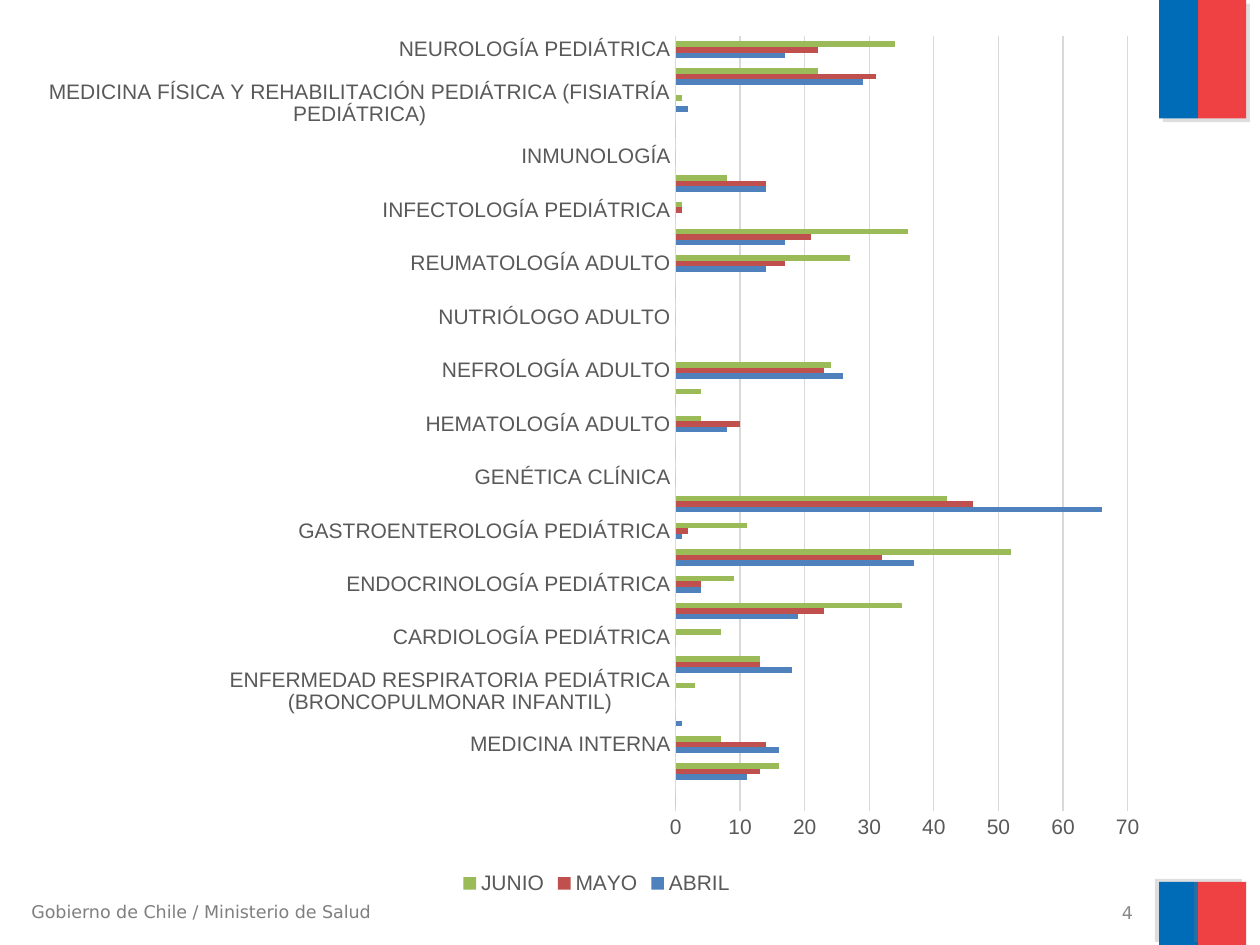
from lxml import etree
from pptx import Presentation
from pptx import util as u
from pptx.chart.data import CategoryChartData
from pptx.dml.color import RGBColor
from pptx.enum import chart as ch, shapes, text
from pptx.oxml import parse_xml
from pptx.oxml.ns import nsdecls, qn

COLORS = {
    "blue": "006CB7", "red": "EF4144", "shadow": "808080",
    "footer": "7F7F7F", "number": "898989", "label": "595959",
    "grid": "D9D9D9", "ABRIL": "4F81BD", "MAYO": "C0504D", "JUNIO": "9BBB59",
}

# Specialty: (ABRIL, MAYO, JUNIO), listed from the bottom up
MONTHS = ("ABRIL", "MAYO", "JUNIO")
DATA = {
    " ": (0, 0, 0),
    "PEDIATRÍA": (11, 13, 16),
    "MEDICINA INTERNA": (16, 14, 7),
    "NEONATOLOGÍA": (1, 0, 0),
    "ENFERMEDAD RESPIRATORIA PEDIÁTRICA (BRONCOPULMONAR INFANTIL)": (0, 0, 3),
    "ENFERMEDAD RESPIRATORIA DE ADULTO (BRONCOPULMONAR)": (18, 13, 13),
    "CARDIOLOGÍA PEDIÁTRICA": (0, 0, 7),
    "CARDIOLOGÍA ADULTO": (19, 23, 35),
    "ENDOCRINOLOGÍA PEDIÁTRICA": (4, 4, 9),
    "ENDOCRINOLOGÍA ADULTO": (37, 32, 52),
    "GASTROENTEROLOGÍA PEDIÁTRICA": (1, 2, 11),
    "GASTROENTEROLOGÍA ADULTO": (66, 46, 42),
    "GENÉTICA CLÍNICA": (0, 0, 0),
    "HEMATO-ONCOLOGÍA INFANTIL": (0, 0, 0),
    "HEMATOLOGÍA ADULTO": (8, 10, 4),
    "NEFROLOGÍA PEDIÁTRICA": (0, 0, 4),
    "NEFROLOGÍA ADULTO": (26, 23, 24),
    "NUTRIÓLOGO PEDIÁTRICO": (0, 0, 0),
    "NUTRIÓLOGO ADULTO": (0, 0, 0),
    "REUMATOLOGÍA PEDIÁTRICA": (0, 0, 0),
    "REUMATOLOGÍA ADULTO": (14, 17, 27),
    "DERMATOLOGÍA": (17, 21, 36),
    "INFECTOLOGÍA PEDIÁTRICA": (0, 1, 1),
    "INFECTOLOGÍA ADULTO": (14, 14, 8),
    "INMUNOLOGÍA": (0, 0, 0),
    "GERIATRÍA": (0, 0, 0),
    "MEDICINA FÍSICA Y REHABILITACIÓN PEDIÁTRICA (FISIATRÍA PEDIÁTRICA)": (2, 0, 1),
    "MEDICINA FÍSICA Y REHABILITACIÓN ADULTO (FISIATRÍA ADULTO)": (29, 31, 22),
    "NEUROLOGÍA PEDIÁTRICA": (17, 22, 34),
}


def rgb(name):
    return RGBColor.from_string(COLORS[name])


def set_font(font, size, color, name):
    font.size, font.name = u.Pt(size), name
    font.color.rgb = rgb(color)


def write(tf, words, size=10, color="footer", font="DejaVu Sans", align=None):
    p = tf.paragraphs[0]
    p.alignment = align
    r = p.add_run()
    r.text = words
    set_font(r.font, size, color, font)


class SlideBuilder:
    chart_font = "Arial"
    label_size = 12

    def __init__(self, s):
        self.s = s

    def block(self, x, y, w, h, color, angle):
        sp = self.s.shapes.add_shape(
            shapes.MSO_SHAPE.RECTANGLE, *map(u.Pt, (x, y, w, h)))
        sp.fill.solid()
        sp.fill.fore_color.rgb = rgb(color)
        sp.line.fill.background()
        sp.shadow.inherit = False
        effects = sp._element.spPr.find(qn("a:effectLst"))
        effects.append(parse_xml(
            f'<a:outerShdw {nsdecls("a")} blurRad="0" dist="{u.Pt(3)}" '
            f'dir="{angle * 60000}" rotWithShape="0"><a:srgbClr val="{COLORS["shadow"]}">'
            '<a:alpha val="25000"/></a:srgbClr></a:outerShdw>'))

    def label(self, x, y, w, h, words, anchor=text.MSO_ANCHOR.TOP, **fmt):
        tf = self.s.shapes.add_textbox(*map(u.Pt, (x, y, w, h))).text_frame
        tf.word_wrap = True
        tf.vertical_anchor = anchor
        write(tf, words, **fmt)

    def bar_chart(self, x, y, w, h, plot):
        data = CategoryChartData()
        data.categories = list(DATA)
        for month, values in zip(MONTHS, zip(*DATA.values())):
            data.add_series(month, values)
        chart = self.s.shapes.add_chart(
            ch.XL_CHART_TYPE.BAR_CLUSTERED, *map(u.Pt, (x, y, w, h)), data).chart
        chart.has_title = False
        chart.font.size, chart.font.name = u.Pt(10), self.chart_font

        # Bars
        bars = chart.plots[0]
        bars.gap_width, bars.overlap, bars.vary_by_categories = 182, 0, False
        for series in bars.series:
            series.format.fill.solid()
            series.format.fill.fore_color.rgb = rgb(series.name)

        # Axes
        cat, val = chart.category_axis, chart.value_axis
        for axis in (cat, val):
            axis.major_tick_mark = axis.minor_tick_mark = ch.XL_TICK_MARK.NONE
            set_font(axis.tick_labels.font, self.label_size, "label", self.chart_font)
        val.minimum_scale, val.maximum_scale, val.major_unit = 0, 70, 10
        val.has_major_gridlines = True
        val.format.line.fill.background()
        for line in (cat.format.line, val.major_gridlines.format.line):
            line.color.rgb = rgb("grid")
            line.width = u.Pt(0.75)

        # Legend
        chart.has_legend = True
        chart.legend.position = ch.XL_LEGEND_POSITION.BOTTOM
        chart.legend.include_in_layout = False
        set_font(chart.legend.font, self.label_size, "label", self.chart_font)

        # Fixed inner plot area, as fractions of the chart
        area = chart._chartSpace.chart.plotArea
        for old in area.findall(qn("c:layout")):
            area.remove(old)
        layout = etree.Element(qn("c:layout"))
        manual = etree.SubElement(layout, qn("c:manualLayout"))
        settings = {"layoutTarget": "inner", "xMode": "edge", "yMode": "edge",
                    **dict(zip("xywh", plot))}
        for tag, value in settings.items():
            etree.SubElement(manual, qn(f"c:{tag}")).set("val", str(value))
        area.insert(0, layout)


def main():
    prs = Presentation()
    prs.slide_width, prs.slide_height = u.Pt(720), u.Pt(540)
    b = SlideBuilder(prs.slides.add_slide(prs.slide_layouts[6]))

    # Flag bands at the top and bottom right
    for y, h, angle in ((0, 67.7, 45), (504, 36, 215)):
        b.block(662.4, y, 22.3, h, "blue", angle)
        b.block(684.7, y, 27.4, h, "red", angle)

    # Footer and slide number
    b.label(10.8, 511.2, 217.4, 19.4, "Gobierno de Chile / Ministerio de Salud")
    b.label(486.7, 514.1, 167.8, 15.1, "4", anchor=text.MSO_ANCHOR.MIDDLE,
            color="number", align=text.PP_ALIGN.RIGHT)

    # Monthly figures by specialty
    b.bar_chart(18, 10.8, 645.8, 503.3, plot=(0.57, 0.02, 0.4, 0.88))

    prs.save("out.pptx")


if __name__ == "__main__":
    main()
